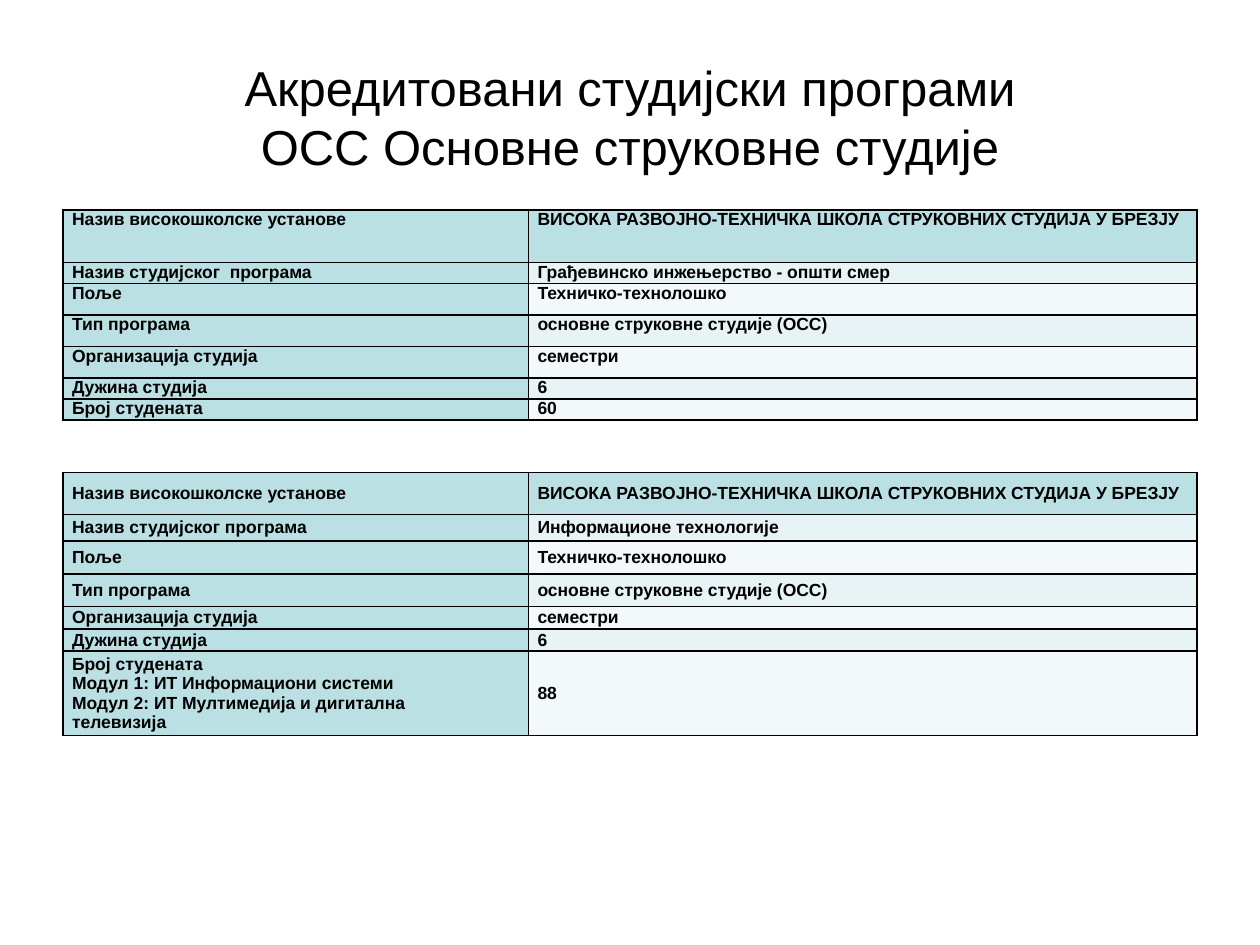
from lxml.etree import SubElement
from pptx import Presentation
from pptx.dml.color import RGBColor
from pptx.enum.text import MSO_ANCHOR as Anchor, PP_ALIGN as Align
from pptx.oxml.ns import qn
from pptx.util import Pt

COLORS = {"ink": "000000", "label": "BBE0E3", "odd": "E7F3F4", "even": "F3F9FA"}
FONT = {"name": "Arial", "bold": False}
LEFT, WIDTH = 36, 648
COLUMNS = [266, 382]
SCHOOL = "ВИСОКА РАЗВОЈНО-ТЕХНИЧКА ШКОЛА СТРУКОВНИХ СТУДИЈА У БРЕЗЈУ"
MODULES = "\nМодул 1: ИТ Информациони системи\nМодул 2: ИТ Мултимедија и дигитална\nтелевизија"

PROGRAMS = [
    {"top": 120, "anchor": Anchor.TOP, "heights": [30, 12, 18, 18, 18, 12, 12],
     "label": "Назив студијског  програма", "name": "Грађевинско инжењерство - општи смер",
     "modules": "", "students": "60"},
    {"top": 270, "anchor": Anchor.MIDDLE, "heights": [24, 15.2, 18.8, 18.6, 12.8, 12.8, 48],
     "label": "Назив студијског програма", "name": "Информационе технологије",
     "modules": MODULES, "students": "88"},
]


def style_text(frame, formats):
    for para in frame.paragraphs:
        for span in para.runs:
            for key, value in formats.items():
                setattr(span.font, key, value)
            span.font.color.rgb = RGBColor.from_string(COLORS["ink"])


def add_borders(cell):
    properties = cell._tc.get_or_add_tcPr()
    for index, side in enumerate(["lnL", "lnR", "lnT", "lnB"]):
        line = properties.makeelement(qn("a:" + side), {"w": str(Pt(1))})
        fill = SubElement(line, qn("a:solidFill"))
        SubElement(fill, qn("a:srgbClr"), val=COLORS["ink"])
        properties.insert(index, line)


deck = Presentation()
deck.slide_width, deck.slide_height = Pt(720), Pt(540)
page = deck.slides.add_slide(deck.slide_layouts[6])

box = page.shapes.add_textbox(Pt(LEFT), Pt(21.6), Pt(WIDTH), Pt(90))
title = box.text_frame
title.word_wrap = True
title.vertical_anchor = Anchor.MIDDLE
title.text = "Акредитовани студијски програми\nОСС Основне струковне студије"
for para in title.paragraphs:
    para.alignment = Align.CENTER
style_text(title, FONT | {"size": Pt(28)})

for program in PROGRAMS:
    rows = [
        ("Назив високошколске установе", SCHOOL),
        (program["label"], program["name"]),
        ("Поље", "Техничко-технолошко"),
        ("Тип програма", "основне струковне студије (ОСС)"),
        ("Организација студија", "семестри"),
        ("Дужина студија", "6"),
        ("Број студената" + program["modules"], program["students"]),
    ]
    heights = program["heights"]
    table = page.shapes.add_table(len(rows), len(COLUMNS), Pt(LEFT), Pt(program["top"]),
                                  Pt(WIDTH), Pt(sum(heights))).table
    for column, width in zip(table.columns, COLUMNS):
        column.width = Pt(width)
    cell_format = {"margin_left": Pt(5.2), "margin_right": Pt(5.2), "margin_top": 0,
                   "margin_bottom": 0, "vertical_anchor": program["anchor"]}
    for r, (texts, height) in enumerate(zip(rows, heights)):
        table.rows[r].height = Pt(height)
        for c, text in enumerate(texts):
            cell = table.cell(r, c)
            cell.text = text
            for key, value in cell_format.items():
                setattr(cell, key, value)
            shade = "label" if r == 0 or c == 0 else "odd" if r % 2 else "even"
            cell.fill.solid()
            cell.fill.fore_color.rgb = RGBColor.from_string(COLORS[shade])
            style_text(cell.text_frame, FONT | {"size": Pt(10), "bold": True})
            add_borders(cell)

deck.save("out.pptx")
